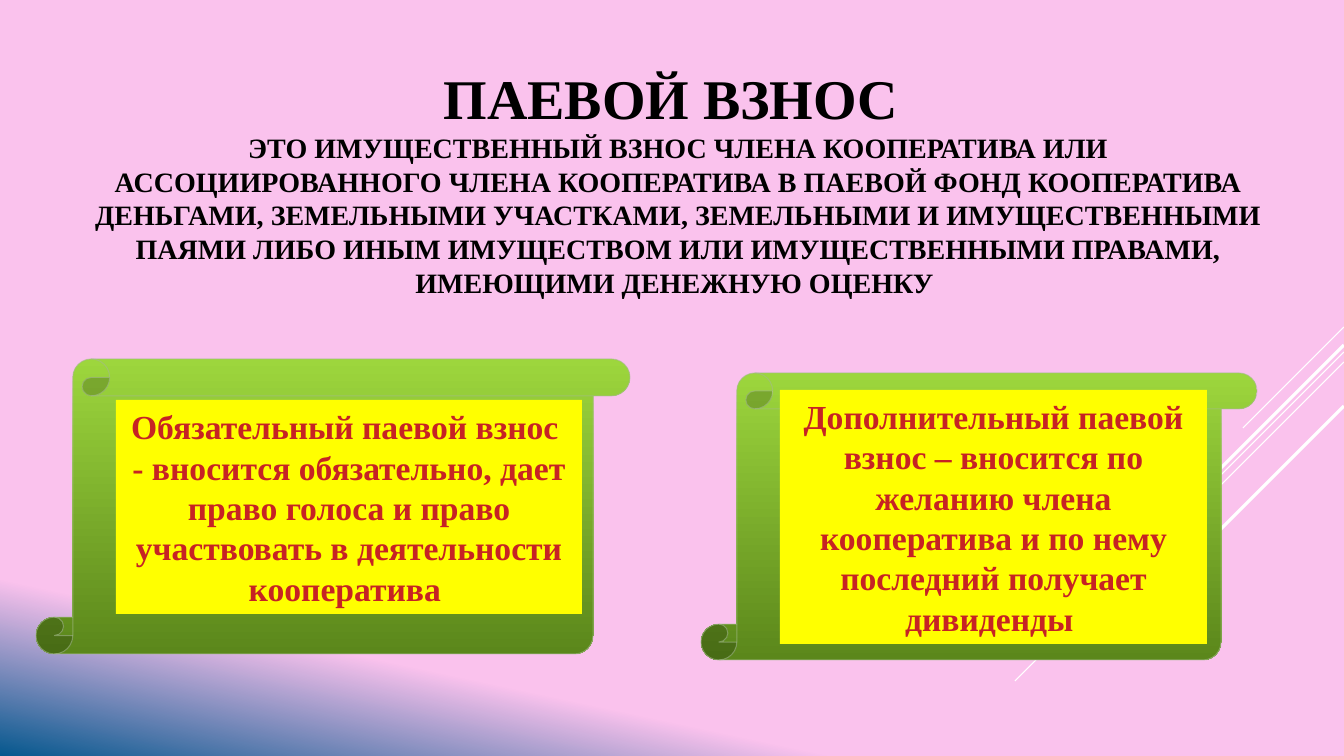
from lxml import etree
from pptx import Presentation
from pptx.dml.color import RGBColor
from pptx.enum.shapes import MSO_CONNECTOR, MSO_SHAPE
from pptx.enum.text import MSO_ANCHOR, MSO_AUTO_SIZE, PP_ALIGN
from pptx.oxml.ns import qn
from pptx.util import Pt

WIDE, HIGH = 1344, 756
SCALE = 12192000 / WIDE
FONT = "Times New Roman"
PINK = RGBColor(0xFA, 0xC2, 0xED)
BLUE = RGBColor(0x06, 0x58, 0x8E)
WHITE = RGBColor(0xFF, 0xFF, 0xFF)
BLACK = RGBColor(0, 0, 0)
LIME = RGBColor(0x9D, 0xD6, 0x3D)
MOSS = RGBColor(0x5B, 0x87, 0x1B)
SAGE = RGBColor(0xA4, 0xBB, 0x8B)
YELLOW = RGBColor(0xFF, 0xFF, 0)
RED = RGBColor(0xC6, 0x23, 0x24)
LINE = MSO_CONNECTOR.STRAIGHT
SCROLL, RECT = MSO_SHAPE.VERTICAL_SCROLL, MSO_SHAPE.RECTANGLE
MIDDLE, CENTER = MSO_ANCHOR.MIDDLE, PP_ALIGN.CENTER
GROW = MSO_AUTO_SIZE.SHAPE_TO_FIT_TEXT

TITLE = "ПАЕВОЙ ВЗНОС "
BODY = (
    "ЭТО ИМУЩЕСТВЕННЫЙ ВЗНОС ЧЛЕНА КООПЕРАТИВА ИЛИ АССОЦИИРОВАННОГО ЧЛЕНА "
    "КООПЕРАТИВА В ПАЕВОЙ ФОНД КООПЕРАТИВА ДЕНЬГАМИ, ЗЕМЕЛЬНЫМИ УЧАСТКАМИ, "
    "ЗЕМЕЛЬНЫМИ И ИМУЩЕСТВЕННЫМИ ПАЯМИ ЛИБО ИНЫМ ИМУЩЕСТВОМ ИЛИ "
    "ИМУЩЕСТВЕННЫМИ ПРАВАМИ, ИМЕЮЩИМИ ДЕНЕЖНУЮ ОЦЕНКУ "
)
MUST = (
    "Обязательный паевой взнос  - вносится обязательно, дает право голоса "
    "и право участвовать в деятельности кооператива "
)
EXTRA = (
    "Дополнительный паевой взнос – вносится по желанию члена кооператива "
    "и по нему последний получает дивиденды "
)
RAYS = [(327, 101, 0.75), (352, 329, 0.75), (362, 209, 0.75),
        (345, 193, 2.25), (406, 140, 2.25)]


def px(*nums):
    """Turn pixel lengths into EMU."""
    return [round(num * SCALE) for num in nums]


def shade(fill, stops, angle):
    """Fill with a two-stop linear gradient, angle counted clockwise."""
    fill.gradient()
    fill.gradient_angle = 360 - angle
    for stop, (place, color) in zip(fill.gradient_stops, stops):
        stop.position = place
        stop.color.rgb = color


def write(para, text, size=24, color=BLACK):
    """Add a bold run to a centred paragraph."""
    para.alignment = CENTER
    run = para.add_run()
    run.text = text
    run.font.name = FONT
    run.font.size = Pt(size)
    run.font.bold = True
    run.font.color.rgb = color


def rays(slide, right):
    """Draw slanting lines down and left from the right edge."""
    for top, reach, width in RAYS:
        ray = slide.shapes.add_connector(
            LINE, *px(right, top, right - reach, top + reach))
        ray.line.color.rgb = WHITE
        ray.line.width = Pt(width)
        etree.SubElement(ray._element.spPr, qn("a:effectLst"))


def head(slide, box):
    """Place the title with its definition below."""
    frame = slide.shapes.add_textbox(*px(*box)).text_frame
    frame.word_wrap = True
    frame.vertical_anchor = MIDDLE
    para = frame.paragraphs[0]
    write(para, TITLE, size=40)
    para.add_line_break()
    write(para, BODY, size=20)


def card(slide, box, inset, text):
    """Place a green scroll and a yellow note inset within it."""
    left, top, wide, high = box
    roll = slide.shapes.add_shape(SCROLL, *px(*box))
    roll.shadow.inherit = False
    shade(roll.fill, [(0, LIME), (1, MOSS)], 90)
    roll.line.color.rgb = SAGE
    roll.line.width = Pt(0.75)
    tint = roll.line._ln.find(".//" + qn("a:srgbClr"))
    etree.SubElement(tint, qn("a:alpha"), val="60000")

    across, down, span, tall = inset
    note = slide.shapes.add_shape(
        RECT, *px(left + across, top + down, span, tall))
    note.shadow.inherit = False
    note.fill.solid()
    note.fill.fore_color.rgb = YELLOW
    note.line.fill.background()
    frame = note.text_frame
    frame.word_wrap = True
    frame.auto_size = GROW
    write(frame.paragraphs[0], text, color=RED)


def main():
    """Build the slide and save it."""
    deck = Presentation()
    deck.slide_width, deck.slide_height = px(WIDE, HIGH)
    slide = deck.slides.add_slide(deck.slide_layouts[6])
    shade(slide.background.fill, [(0.83, PINK), (1, BLUE)], 102)
    rays(slide, WIDE)
    head(slide, (85, 37, 1186, 288))
    card(slide, (36, 359, 594, 295), (80, 41, 466, 214), MUST)
    card(slide, (701, 373, 556, 287), (79, 17, 427, 254), EXTRA)
    deck.save("out.pptx")


if __name__ == "__main__":
    main()
